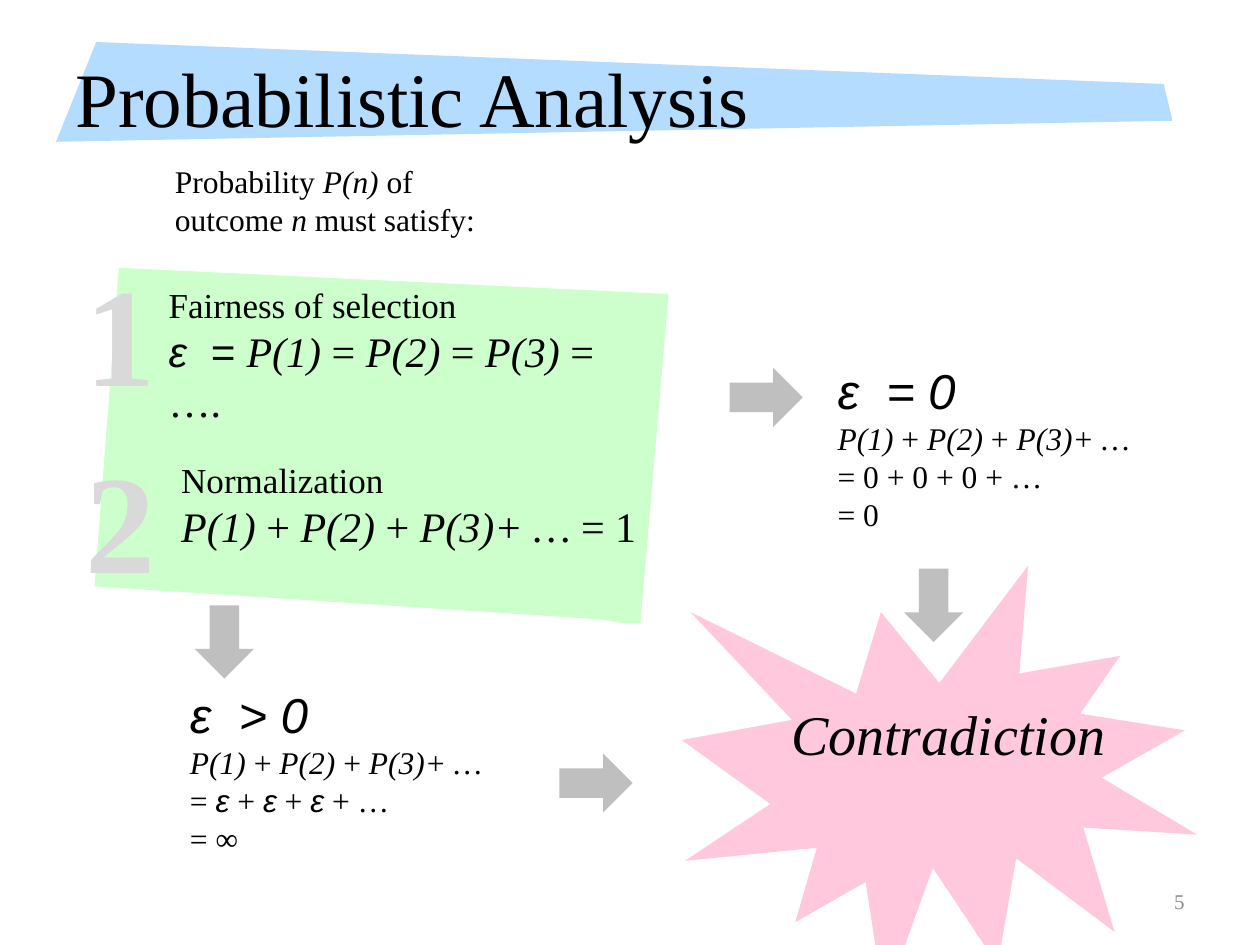
import pptx
import pptx.util
import pptx.dml.color
import pptx.enum.shapes
import pptx.enum.text

Pt = pptx.util.Pt
RGB = pptx.dml.color.RGBColor
SHAPE = pptx.enum.shapes.MSO_SHAPE
ANCHOR = pptx.enum.text.MSO_ANCHOR
ALIGN = pptx.enum.text.PP_ALIGN

BLACK = RGB(0x00, 0x00, 0x00)
GREEN = RGB(0xCC, 0xFF, 0xCC)
BLUE = RGB(0xB4, 0xDC, 0xFF)
PINK = RGB(0xFF, 0xC8, 0xDC)
SILVER = RGB(0xBF, 0xBF, 0xBF)
PALE = RGB(0xD9, 0xD9, 0xD9)
GREY = RGB(0x8C, 0x8C, 0x8C)
SERIF, SANS = "Times New Roman", "Arial"

# Content: a line is (size, runs); a run is (text, style),
# with style "" plain, "i" italic, "b" bold, "s" italic sans
SUM = [("P(1)", "i"), (" + ", ""), ("P(2)", "i"), (" + ", ""), ("P(3)+ …", "i")]
EPS = ("ε", "s")
PLUS = (" + ", "")

PANELS = [
    (GREEN, [(67.7, 153.4), (382.3, 168.5), (366.5, 356.4),
             (355, 355.7), (344.2, 354.2), (54, 334.8)]),
    (BLUE, [(54.7, 24.5), (664.6, 48.2), (669.6, 69.1), (31.7, 80.6)]),
]

BURST = (389.5, 323.3, 294.5, 249.8)
ARROW = (41.8, 33.8)
ARROWS = [(416.9, 210.2, 0), (107.3, 349.9, 90),
          (319.7, 430.6, 0), (512.6, 329, 90)]

# Box (left, top, width, height), colour, lines
TEXTS = [
    ((92.9, 89.3, 193.7, 51), BLACK, [
        (18, [("Probability ", ""), ("P(n)", "i"), (" of outcome ", ""),
              ("n", "i"), (" must satisfy:", "")])]),
    ((89.3, 158.4, 285.8, 60.5), BLACK, [
        (20, [("Fairness of selection", "")]),
        (24, [("ε  = ", "s"), ("P(1)", "i"), (" = ", ""), ("P(2)", "i"),
              (" = ", ""), ("P(3)", "i"), (" = ….", "")])]),
    ((96.5, 258.5, 278.6, 60.5), BLACK, [
        (20, [("Normalization", "")]),
        (24, SUM + [(" = 1", "")])]),
    ((41.8, 137.5, 54.7, 104.4), PALE, [(80, [("1", "b")])]),
    ((41.8, 244.1, 54.7, 104.4), PALE, [(80, [("2", "b")])]),
    ((471.6, 202.3, 185, 106.6), BLACK, [
        (28, [("ε  = 0", "s")]),
        (18, SUM),
        (18, [("= 0 + 0 + 0 + …", "")]),
        (18, [("= 0", "")])]),
    ((101.5, 387.4, 185, 106.6), BLACK, [
        (28, [("ε  > 0", "s")]),
        (18, SUM),
        (18, [("= ", ""), EPS, PLUS, EPS, PLUS, EPS, (" + …", "")]),
        (18, [("= ∞", "")])]),
    ((445, 396, 204.5, 46.1), BLACK, [(32, [("Contradiction", "i")])]),
]
TITLE = ((36, 21.6, 602.6, 67.7), BLACK, [(44, [("Probabilistic Analysis", "")])])
NUMBER = ((516.2, 500.4, 167.8, 28.8), GREY, [(12, [("5", "")])])

deck = pptx.Presentation()
deck.slide_width, deck.slide_height = Pt(720), Pt(540)
slide = deck.slides.add_slide(deck.slide_layouts[6])
shapes = slide.shapes


def paint(shape, color):
    shape.shadow.inherit = False
    shape.fill.solid()
    shape.fill.fore_color.rgb = color
    shape.line.fill.background()


def write(box, color, lines, anchor=ANCHOR.TOP, align=ALIGN.LEFT):
    frame = shapes.add_textbox(*map(Pt, box)).text_frame
    frame.word_wrap = True
    frame.vertical_anchor = anchor
    for i, (size, runs) in enumerate(lines):
        para = frame.add_paragraph() if i else frame.paragraphs[0]
        para.alignment = align
        for text, style in runs:
            run = para.add_run()
            run.text = text
            font = run.font
            font.size = Pt(size)
            font.name = SANS if style == "s" else SERIF
            font.italic = style in ("i", "s")
            font.bold = style == "b"
            font.color.rgb = color


# Slanted panels
for color, dots in PANELS:
    pen = shapes.build_freeform(*dots[0], scale=Pt(1))
    pen.add_line_segments(dots[1:], close=True)
    paint(pen.convert_to_shape(), color)

# Burst and arrows
paint(shapes.add_shape(SHAPE.EXPLOSION1, *map(Pt, BURST)), PINK)
for left, top, turn in ARROWS:
    arrow = shapes.add_shape(SHAPE.RIGHT_ARROW, *map(Pt, (left, top, *ARROW)))
    arrow.rotation = turn
    paint(arrow, SILVER)

# Words
write(*TITLE, anchor=ANCHOR.MIDDLE)
for item in TEXTS:
    write(*item)
write(*NUMBER, anchor=ANCHOR.MIDDLE, align=ALIGN.RIGHT)

deck.save("out.pptx")
